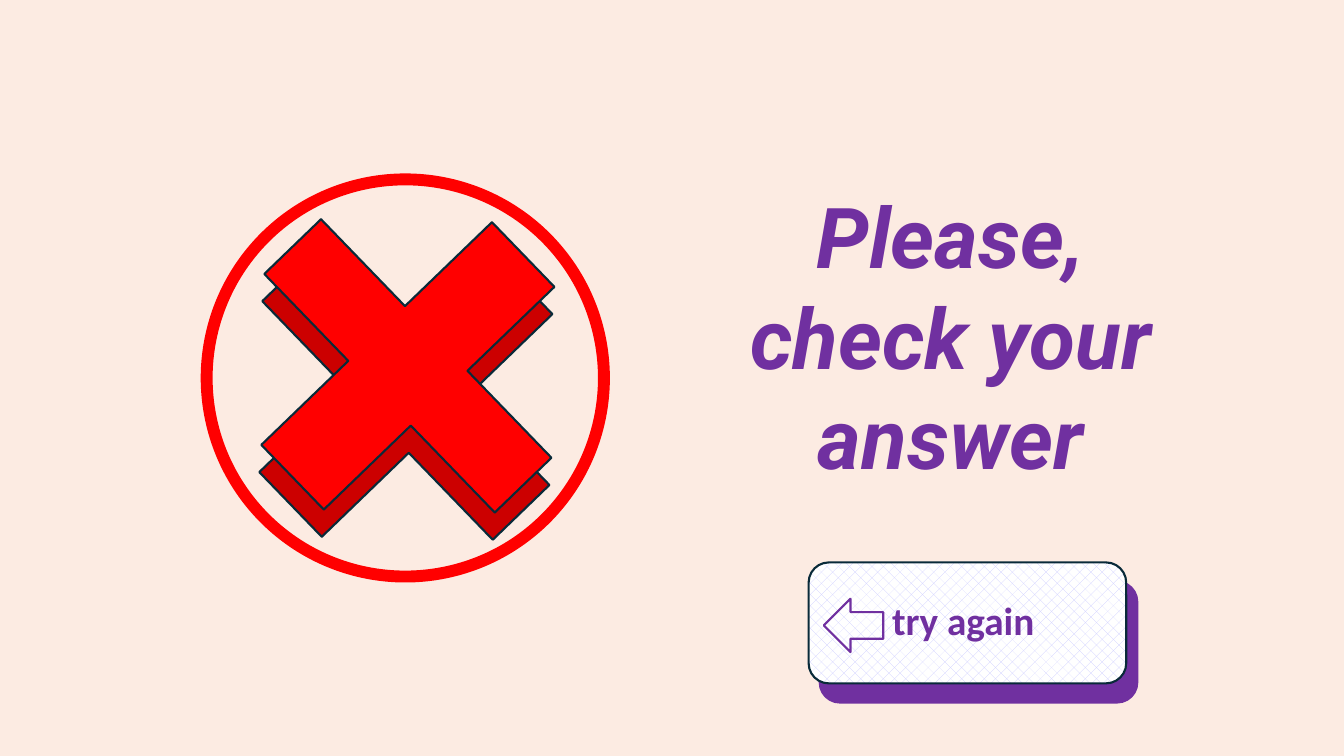
from pptx import Presentation
from pptx.dml.color import RGBColor
from pptx.enum.dml import MSO_PATTERN
from pptx.enum.shapes import MSO_SHAPE as Shape
from pptx.enum.text import MSO_ANCHOR, MSO_AUTO_SIZE, PP_ALIGN
from pptx.util import Inches, Pt

PEACH = RGBColor(0xFC, 0xEB, 0xE2)
RED = RGBColor(0xFF, 0x00, 0x00)
DARK_RED = RGBColor(0xCC, 0x00, 0x00)
PURPLE = RGBColor(0x70, 0x30, 0xA0)
LILAC = RGBColor(0xCC, 0xCC, 0xFF)
WHITE = RGBColor(0xFF, 0xFF, 0xFF)
NAVY = RGBColor(0x09, 0x2A, 0x39)

MESSAGE = ["Please, ", "check your ", "answer "]
MESSAGE_BOX = (7.24, 1.78, 4.58, 3.13)
MESSAGE_FONT = {"name": "Roboto", "size": Pt(60), "bold": True, "italic": True}
BUTTON_LABEL = "try again"
BUTTON_FONT = {"name": "Calibri", "size": Pt(28), "bold": True}

RING_BOX = (2.05, 1.78, 3.94, 3.94)
CROSS_SIZE = (3.29, 3.18)
CROSSES = [((2.38, 2.31), DARK_RED), ((2.4, 2.04), RED)]
BUTTON_SIZE = (3.15, 1.2)
BUTTON_SHADE_AT = (8.13, 5.77)
BUTTON_AT = (8.02, 5.58)
ARROW_BOX = (8.17, 5.94, 0.59, 0.53)

presentation = Presentation()
presentation.slide_width = Inches(13.33)
presentation.slide_height = Inches(7.5)
slide = presentation.slides.add_slide(presentation.slide_layouts[6])
slide.background.fill.solid()
slide.background.fill.fore_color.rgb = PEACH


def add_figure(kind, box, line_color, fill_color=None, line_width=1.5):
    """Add a preset shape; without a fill colour it stays see-through."""
    shape = slide.shapes.add_shape(kind, *map(Inches, box))
    shape.shadow.inherit = False
    shape.line.color.rgb = line_color
    shape.line.width = Pt(line_width)
    if fill_color is None:
        shape.fill.background()
    else:
        shape.fill.solid()
        shape.fill.fore_color.rgb = fill_color
    return shape


def write(paragraph, text, font_format, alignment):
    paragraph.alignment = alignment
    run = paragraph.add_run()
    run.text = text
    for name, value in font_format.items():
        setattr(run.font, name, value)
    run.font.color.rgb = PURPLE


add_figure(Shape.FLOWCHART_CONNECTOR, RING_BOX, RED, line_width=8.5)
for position, color in CROSSES:
    cross = add_figure(Shape.CROSS, position + CROSS_SIZE, NAVY, color)
    cross.rotation = 46
    cross.adjustments[0] = 0.377

add_figure(Shape.ROUNDED_RECTANGLE, BUTTON_SHADE_AT + BUTTON_SIZE, PURPLE, PURPLE)
button = add_figure(Shape.ROUNDED_RECTANGLE, BUTTON_AT + BUTTON_SIZE, NAVY)
button.fill.patterned()
button.fill.pattern = MSO_PATTERN.PERCENT_25
button.fill.fore_color.rgb = LILAC
button.fill.back_color.rgb = WHITE
button_frame = button.text_frame
button_frame.vertical_anchor = MSO_ANCHOR.MIDDLE
button_frame.margin_left = Inches(0.77)
label = button_frame.paragraphs[0]
label.line_spacing = 0.9
label.space_before = Pt(10)
write(label, BUTTON_LABEL, BUTTON_FONT, PP_ALIGN.LEFT)
add_figure(Shape.LEFT_ARROW, ARROW_BOX, PURPLE)

message_frame = slide.shapes.add_textbox(*map(Inches, MESSAGE_BOX)).text_frame
message_frame.word_wrap = False
message_frame.auto_size = MSO_AUTO_SIZE.SHAPE_TO_FIT_TEXT
for index, text in enumerate(MESSAGE):
    paragraph = message_frame.add_paragraph() if index else message_frame.paragraphs[0]
    write(paragraph, text, MESSAGE_FONT, PP_ALIGN.CENTER)

presentation.save("out.pptx")
